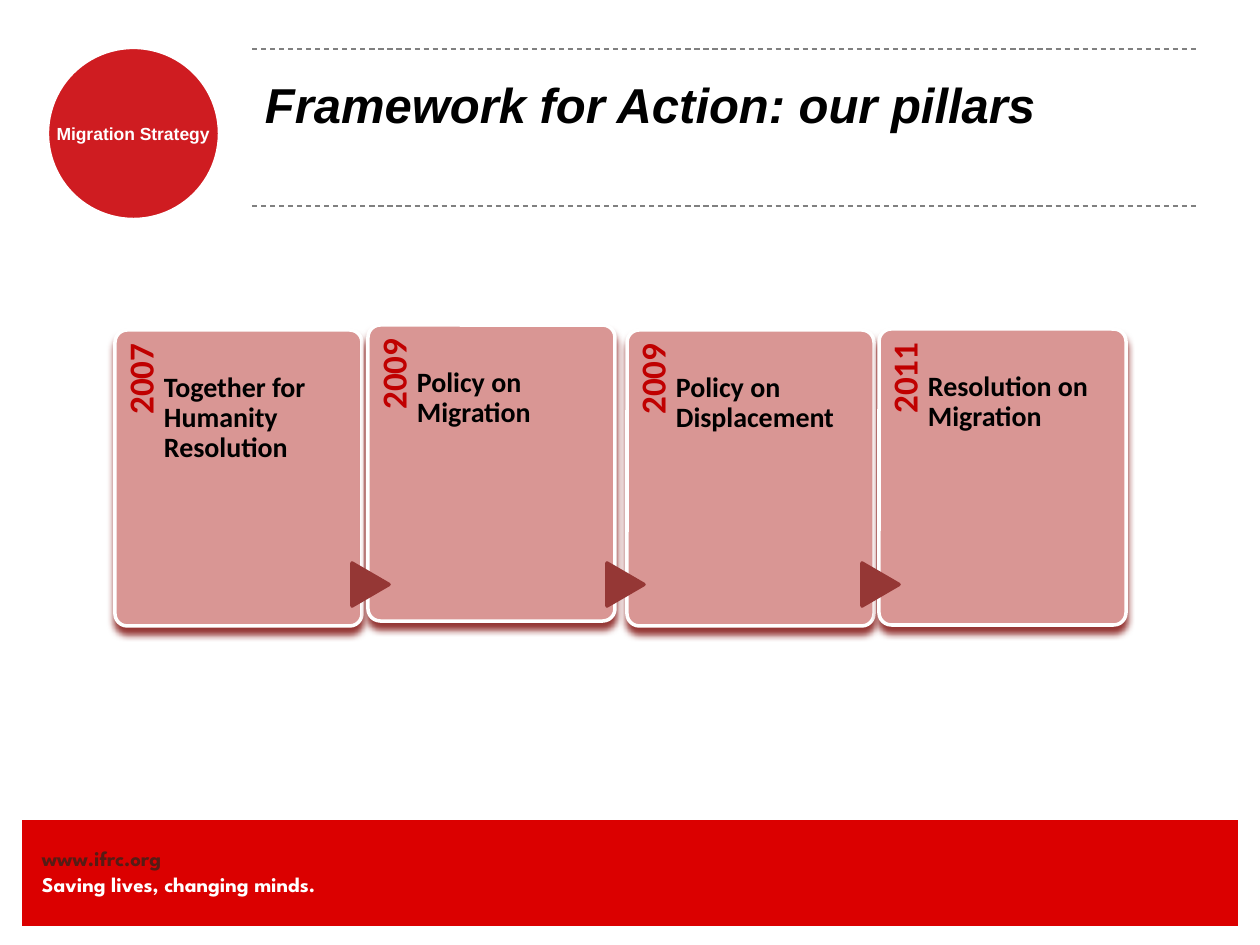
"""Build the migration strategy slide with its four framework pillars."""
from lxml.etree import SubElement
from pptx import Presentation
from pptx.dml.color import RGBColor
from pptx.enum.dml import MSO_LINE
from pptx.enum.shapes import MSO_CONNECTOR, MSO_SHAPE
from pptx.enum.text import MSO_ANCHOR, PP_ALIGN
from pptx.oxml.ns import qn
from pptx.util import Emu, Pt

PX = 914400 / 126
COLORS = {
    "white": "FFFFFF", "black": "000000", "footer": "DB0000", "link": "551C15",
    "badge": "CF1C21", "rule": "808080", "card": "D99694", "dark": "953735", "year": "C00000",
}
RGB = {name: RGBColor.from_string(value) for name, value in COLORS.items()}

prs = Presentation()
prs.slide_width, prs.slide_height = Emu(round(1260 * PX)), Emu(round(945 * PX))
s = prs.slides.add_slide(prs.slide_layouts[6])


def add_shape(kind, box, fill, line, width):
    sp = s.shapes.add_shape(kind, *[Emu(round(v * PX)) for v in box])
    sp.shadow.inherit = False
    sp.fill.solid()
    sp.fill.fore_color.rgb = RGB[fill]
    sp.line.color.rgb = RGB[line]
    sp.line.width = Pt(width)
    return sp


def add_text(box, lines, font, margins=(0, 0, 0, 0), **para):
    sp = s.shapes.add_textbox(*[Emu(round(v * PX)) for v in box])
    tf = sp.text_frame
    tf.word_wrap = True
    tf.vertical_anchor = MSO_ANCHOR.TOP
    for side, v in zip(("left", "top", "right", "bottom"), margins):
        setattr(tf, f"margin_{side}", Emu(round(v * PX)))
    for i, (text, color) in enumerate(lines):
        p = tf.add_paragraph() if i else tf.paragraphs[0]
        for key, value in para.items():
            setattr(p, key, value)
        r = p.add_run()
        r.text = text
        r.font.color.rgb = RGB[color]
        for key, value in font.items():
            setattr(r.font, key, value)
    return sp


add_shape(MSO_SHAPE.RECTANGLE, (21, 819, 1218, 108), "footer", "white", 0.75)
add_text((42, 846, 431, 50), [("www.ifrc.org", "link"), ("Saving lives, changing minds.", "white")],
         {"name": "League Spartan", "size": Pt(12), "bold": True})

add_shape(MSO_SHAPE.OVAL, (47, 47, 173, 173), "badge", "white", 2.5)
add_text((54, 102, 158, 43), [("Migration Strategy", "white")],
         {"name": "Arial", "size": Pt(10), "bold": True}, (0, 21, 0, 0), alignment=PP_ALIGN.CENTER)

for y in (49, 206):
    cx = s.shapes.add_connector(MSO_CONNECTOR.STRAIGHT,
                                *[Emu(round(v * PX)) for v in (252, y, 1197, y)])
    cx.line.color.rgb = RGB["rule"]
    cx.line.width = Pt(0.75)
    cx.line.dash_style = MSO_LINE.DASH
    SubElement(cx._element.spPr, qn("a:effectLst"))

add_text((252, 48, 945, 157), [("Framework for Action: our pillars", "black")],
         {"name": "Arial", "size": Pt(28), "bold": True, "italic": True}, (13, 26, 13, 6))

CARDS = [
    (115, 330, "2007", "Together for Humanity Resolution"),
    (368, 325, "2009", "Policy on Migration"),
    (627, 330, "2009", "Policy on Displacement"),
    (879, 329, "2011", "Resolution on Migration"),
]
for i, (x, y, year, label) in enumerate(CARDS):
    sp = add_shape(MSO_SHAPE.ROUNDED_RECTANGLE, (x, y, 247, 296), "card", "white", 2)
    sp.adjustments[0] = 0.05
    effects = sp._element.spPr.find(qn("a:effectLst"))
    shadow = SubElement(effects, qn("a:outerShdw"), blurRad=str(Pt(4)), dist=str(Pt(4)),
                        dir="5400000", algn="ctr", rotWithShape="0")
    SubElement(shadow, qn("a:srgbClr"), val=COLORS["dark"])

    sp = add_text((x - 97, y + 97, 242, 49), [(year, "year")],
                  {"name": "Calibri", "size": Pt(20), "bold": True}, (0, 9, 13, 0),
                  alignment=PP_ALIGN.RIGHT, line_spacing=0.9)
    sp.rotation = 270
    if i:
        sp = add_shape(MSO_SHAPE.FLOWCHART_EXTRACT, (94 + 255 * i, 566, 43, 37), "dark", "dark", 2)
        sp.rotation = 90
    add_text((x + 49, y, 184, 296), [(label, "black")],
             {"name": "Calibri", "size": Pt(16), "bold": True}, (0, 43, 0, 0), line_spacing=0.9)

prs.save("out.pptx")
